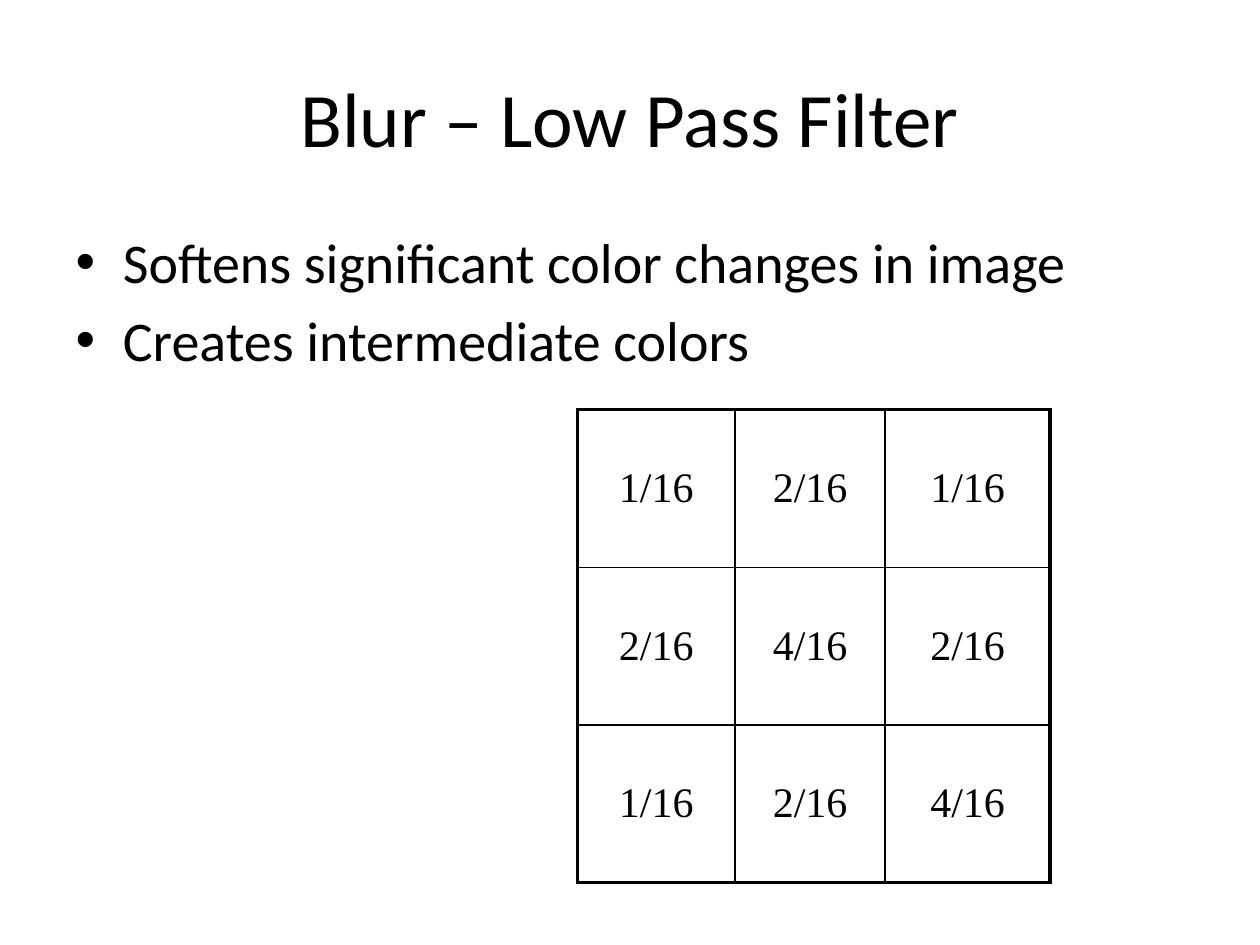
"""Builds a slide on the blur filter with its 3 by 3 kernel table."""
from dataclasses import dataclass

import lxml.etree
import pptx
import pptx.dml.color
import pptx.enum.text
import pptx.oxml.ns
import pptx.util
from pptx.util import Cm, Pt

BLACK = pptx.dml.color.RGBColor(0, 0, 0)
WHITE = pptx.dml.color.RGBColor(255, 255, 255)
OUTER_LINE = Pt(2.25)
INNER_LINE = Pt(1)


@dataclass(frozen=True)
class Area:
    left: float
    top: float
    width: float
    height: float

    def lengths(self) -> list[int]:
        return [Cm(value) for value in (self.left, self.top, self.width, self.height)]


@dataclass(frozen=True)
class TextBlock:
    area: Area
    lines: tuple[str, ...]
    size: int


@dataclass(frozen=True)
class Kernel:
    area: Area
    column_widths: tuple[float, ...]
    weights: tuple[tuple[int, ...], ...]
    divisor: int


TITLE = TextBlock(Area(1.27, 0.76, 22.86, 3.18), ("Blur – Low Pass Filter",), 44)
BODY = TextBlock(
    Area(1.27, 4.45, 22.86, 12.57),
    ("Softens significant color changes in image", "Creates intermediate colors"),
    32,
)
BLUR = Kernel(
    Area(11.64, 8.26, 9.53, 9.53),
    (3.18, 3.02, 3.33),
    ((1, 2, 1), (2, 4, 2), (1, 2, 4)),
    16,
)


def style_paragraph(para, font_name: str, size: int) -> None:
    para.font.name = font_name
    para.font.size = Pt(size)
    para.font.color.rgb = BLACK


def fill_placeholder(box, block: TextBlock) -> None:
    box.left, box.top, box.width, box.height = block.area.lengths()
    box.text_frame.text = "\n".join(block.lines)
    for para in box.text_frame.paragraphs:
        style_paragraph(para, "Calibri", block.size)


def add_border(cell, side: str, width: int) -> None:
    qn = pptx.oxml.ns.qn
    properties = cell._tc.get_or_add_tcPr()
    line = lxml.etree.SubElement(properties, qn(f"a:ln{side}"), w=str(width))
    solid = lxml.etree.SubElement(line, qn("a:solidFill"))
    lxml.etree.SubElement(solid, qn("a:srgbClr"), val=str(BLACK))


def draw_kernel(page, kernel: Kernel) -> None:
    rows, columns = len(kernel.weights), len(kernel.column_widths)
    table = page.shapes.add_table(rows, columns, *kernel.area.lengths()).table
    table.first_row = False
    table.horz_banding = False
    for column, width in zip(table.columns, kernel.column_widths):
        column.width = Cm(width)
    for r, weights in enumerate(kernel.weights):
        for c, weight in enumerate(weights):
            cell = table.cell(r, c)
            outer_sides = {
                "L": c == 0,
                "R": c == columns - 1,
                "T": r == 0,
                "B": r == rows - 1,
            }
            for side, is_outer in outer_sides.items():
                add_border(cell, side, OUTER_LINE if is_outer else INNER_LINE)
            cell.fill.background()
            cell.vertical_anchor = pptx.enum.text.MSO_ANCHOR.MIDDLE
            cell.text = f"{weight}/{kernel.divisor}"
            para = cell.text_frame.paragraphs[0]
            para.alignment = pptx.enum.text.PP_ALIGN.CENTER
            para.space_before = Pt(4.8)
            style_paragraph(para, "Times New Roman", 24)


def main() -> None:
    deck = pptx.Presentation()
    deck.slide_width, deck.slide_height = Cm(25.4), Cm(19.05)
    page = deck.slides.add_slide(deck.slide_layouts[1])
    page.background.fill.solid()
    page.background.fill.fore_color.rgb = WHITE
    fill_placeholder(page.shapes.title, TITLE)
    fill_placeholder(page.placeholders[1], BODY)
    draw_kernel(page, BLUR)
    deck.save("out.pptx")


if __name__ == "__main__":
    main()
